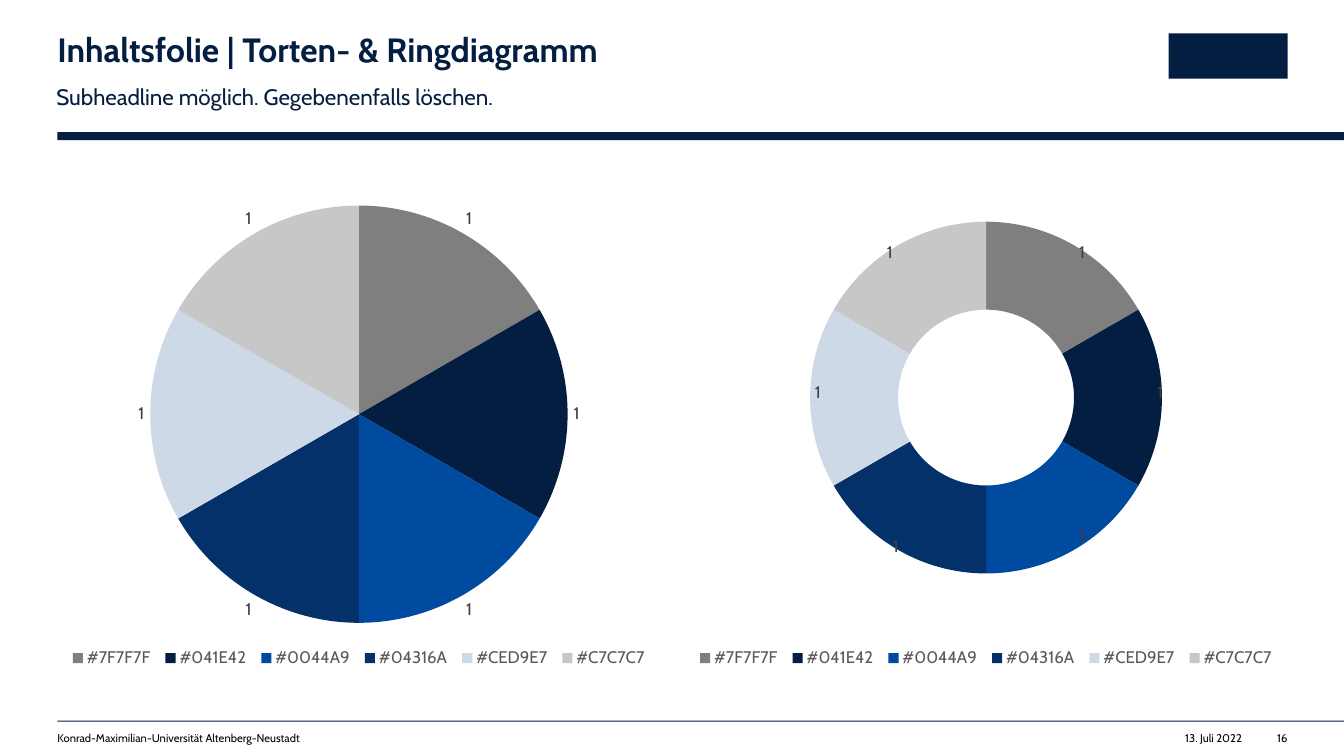
from lxml import etree
from pptx import Presentation
from pptx.chart.data import CategoryChartData
from pptx.dml.color import RGBColor
from pptx.enum.chart import XL_CHART_TYPE, XL_LABEL_POSITION, XL_LEGEND_POSITION
from pptx.enum.shapes import MSO_SHAPE
from pptx.enum.text import PP_ALIGN
from pptx.oxml.ns import qn
from pptx.util import Inches, Pt

PIE, RING = XL_CHART_TYPE.PIE, XL_CHART_TYPE.DOUGHNUT
OUTSIDE = XL_LABEL_POSITION.OUTSIDE_END
BOTTOM = XL_LEGEND_POSITION.BOTTOM
RECT = MSO_SHAPE.RECTANGLE
LEFT, RIGHT = PP_ALIGN.LEFT, PP_ALIGN.RIGHT
FONT, NAVY = "Cabin", "041E42"
WIDE, HIGH, EDGE = 13.33, 7.5, 0.57
END = 12.77

SLICES = [
    ("#7F7F7F", "7F7F7F"), ("#041E42", "041E42"), ("#0044A9", "004A9F"),
    ("#04316A", "04316A"), ("#CED9E7", "CED9E7"), ("#C7C7C7", "C7C7C7"),
]
# Label shifts as shares of the ring chart's width and height
SHIFTS = [(0.05, -0.06), (0.07, -0.01), (0.05, 0.05),
          (-0.04, 0.07), (-0.06, -0.01), (-0.05, -0.06)]
# Top and diameter of each round plot inside its chart, in inches
ROUNDS = {PIE: (0.26, 4.14), RING: (0.42, 3.49)}


def color(code):
    return RGBColor.from_string(code)


def style(font, size, code, bold=False):
    font.name, font.size, font.bold = FONT, Pt(size), bold
    font.color.rgb = color(code)


def add_text(slide, box, text, size=8, code="000000", bold=False,
             align=LEFT, inset=(0, 0), wrap=True, line=None, after=None):
    frame = slide.shapes.add_textbox(*map(Inches, box)).text_frame
    frame.word_wrap = wrap
    frame.margin_left = frame.margin_right = Inches(inset[0])
    frame.margin_top = frame.margin_bottom = Inches(inset[1])
    par = frame.paragraphs[0]
    par.alignment = align
    if line:
        par.line_spacing = line
    if after:
        par.space_after = Pt(after)
    run = par.add_run()
    run.text = text
    style(run.font, size, bold=bold, code=code)


def add_bar(slide, box):
    bar = slide.shapes.add_shape(RECT, *map(Inches, box))
    bar.shadow.inherit = False
    bar.fill.solid()
    bar.fill.fore_color.rgb = color(NAVY)
    bar.line.fill.background()


def set_layout(parent, index, **parts):
    """Give a chart part a manual layout, as its child at the index."""
    for old in parent.findall(qn("c:layout")):
        parent.remove(old)
    layout = etree.Element(qn("c:layout"))
    manual = etree.SubElement(layout, qn("c:manualLayout"))
    for tag, value in parts.items():
        etree.SubElement(manual, qn("c:" + tag)).set("val", str(value))
    parent.insert(index, layout)


def add_round(slide, box, kind):
    """Add a pie or ring chart with equal slices and a legend below."""
    data = CategoryChartData()
    data.categories = [name for name, _ in SLICES]
    data.add_series("Series 1", [1] * len(SLICES))
    chart = slide.shapes.add_chart(kind, *map(Inches, box), data).chart
    style(chart.font, 10, "000000")
    chart.has_title = False
    chart.has_legend = True
    chart.legend.position = BOTTOM
    chart.legend.include_in_layout = False
    style(chart.legend.font, 12, "595959")

    plot = chart.plots[0]
    plot.vary_by_categories = True
    series = plot.series[0]
    labels = series.data_labels
    labels.show_value = True
    style(labels.font, 12, "404040")
    for i, (_, code) in enumerate(SLICES):
        look = series.points[i].format
        look.fill.solid()
        look.fill.fore_color.rgb = color(code)
        look.line.fill.background()
    if kind == PIE:
        labels.position = OUTSIDE
    else:
        shape_ring(chart, series)
    place_parts(chart, box, *ROUNDS[kind])


def place_parts(chart, box, top, size):
    """Centre the plot across the chart and keep the legend in one row."""
    width, height = box[2:]
    root = chart.element
    set_layout(next(root.iter(qn("c:plotArea"))), 0, layoutTarget="inner",
               xMode="edge", yMode="edge", x=(width - size) / 2 / width,
               y=top / height, w=size / width, h=size / height)
    set_layout(next(root.iter(qn("c:legend"))), 1, xMode="edge", yMode="edge",
               x=0.01, y=0.92, w=0.98, h=0.06)


def shape_ring(chart, series):
    """Set the hole and the shifted labels."""
    root = chart.element
    for i in range(len(SHIFTS)):
        style(series.points[i].data_label.font, 12, "404040")
    for label, (x, y) in zip(root.iter(qn("c:dLbl")), SHIFTS):
        set_layout(label, 1, x=x, y=y)
    next(root.iter(qn("c:holeSize"))).set("val", "80")


def add_head(slide, left, top):
    add_text(slide, (left, top, 7.49, 0.36),
             "Inhaltsfolie | Torten- & Ringdiagramm",
             size=24, code=NAVY, bold=True, line=0.9)
    add_text(slide, (left - 0.11, top + 0.42, 7.49, 0.27),
             "Subheadline möglich. Gegebenenfalls löschen.",
             size=16, code=NAVY, inset=(0.1, 0.05), line=1.1, after=8)
    add_bar(slide, (END - 1.18, top, 1.18, 0.45))
    add_bar(slide, (left, top + 0.98, WIDE - left, 0.08))


def add_foot(slide, left, top):
    add_bar(slide, (left, top, WIDE - left, 0.01))
    row = top + 0.11
    add_text(slide, (left, row, 5.98, 0.13),
             "Konrad-Maximilian-Universität Altenberg-Neustadt")
    add_text(slide, (11.64, row, 0.68, 0.13), "13. Juli 2022",
             align=RIGHT, wrap=False)
    add_text(slide, (12.64, row, END - 12.64, 0.13), "16",
             align=RIGHT, wrap=False)


def add_charts(slide, left, top, width, height, gap=0.24):
    part = (width - gap) / 2
    for i, kind in enumerate((PIE, RING)):
        add_round(slide, (left + i * (part + gap), top, part, height), kind)


def main():
    deck = Presentation()
    deck.slide_width, deck.slide_height = Inches(WIDE), Inches(HIGH)
    slide = deck.slides.add_slide(deck.slide_layouts[6])
    add_head(slide, EDGE, 0.33)
    add_charts(slide, EDGE, 1.78, END - EDGE, 5)
    add_foot(slide, EDGE, 7.15)
    deck.save("out.pptx")


if __name__ == "__main__":
    main()
